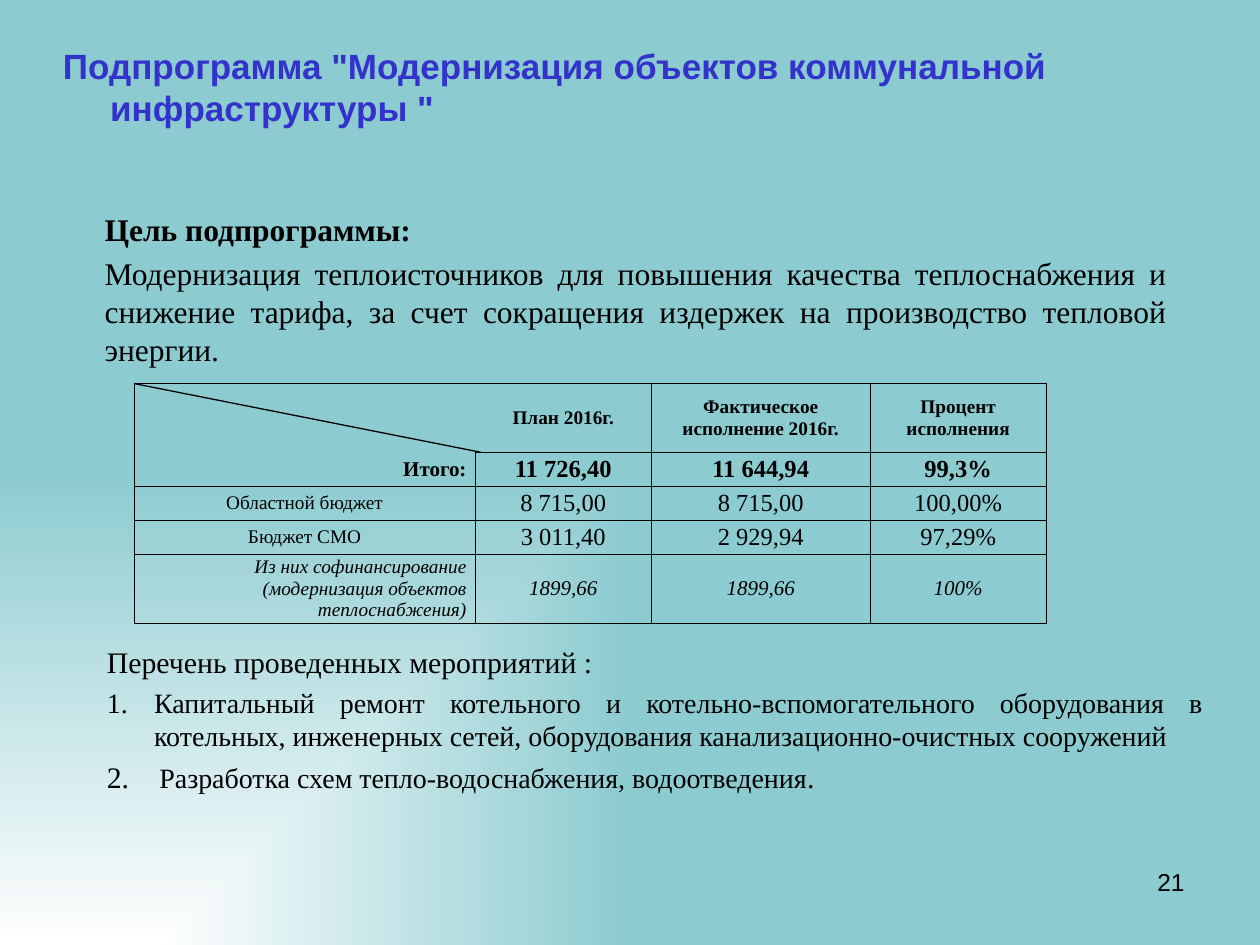
from lxml import etree
from pptx import Presentation
from pptx.dml.color import RGBColor
from pptx.enum.shapes import MSO_CONNECTOR
from pptx.enum.text import MSO_ANCHOR, PP_ALIGN
from pptx.oxml.ns import qn
from pptx.util import Pt

BLACK = RGBColor(0x00, 0x00, 0x00)
WHITE = RGBColor(0xFF, 0xFF, 0xFF)
TEAL = RGBColor(0x8C, 0xCB, 0xD0)
INDIGO = RGBColor(0x33, 0x33, 0xCC)
LEFT, CENTER, RIGHT, JUSTIFY = PP_ALIGN.LEFT, PP_ALIGN.CENTER, PP_ALIGN.RIGHT, PP_ALIGN.JUSTIFY
TOP, MIDDLE = MSO_ANCHOR.TOP, MSO_ANCHOR.MIDDLE
STRAIGHT = MSO_CONNECTOR.STRAIGHT
SERIF, SANS = "Times New Roman", "Arial"


class SlideBuilder:
    def __init__(self, slide):
        self.slide = slide

    def background(self, corner, field):
        fill = self.slide.background.fill
        fill.gradient()
        for stop, color in zip(fill.gradient_stops, (corner, field)):
            stop.color.rgb = color
        gradient = self.slide.element.find(".//" + qn("a:gradFill"))
        gradient.remove(gradient.find(qn("a:lin")))
        focus = etree.SubElement(gradient, qn("a:path"), {"path": "rect"})
        etree.SubElement(focus, qn("a:fillToRect"), {"l": "0", "t": "100000", "r": "100000", "b": "0"})

    def style(self, paragraph, size, align, font=SERIF, color=BLACK, bold=False, italic=False):
        paragraph.alignment = align
        paragraph.font.size = Pt(size)
        paragraph.font.name = font
        paragraph.font.color.rgb = color
        paragraph.font.bold = bold
        paragraph.font.italic = italic

    def hang(self, paragraph, indent):
        properties = paragraph._p.get_or_add_pPr()
        properties.set("marL", str(Pt(indent)))
        properties.set("indent", str(-Pt(indent)))
        return properties

    def number(self, paragraph, value, indent, scale=100):
        properties = self.hang(paragraph, indent)
        etree.SubElement(properties, qn("a:buSzPct"), {"val": str(scale * 1000)})
        etree.SubElement(properties, qn("a:buFont"), {"typeface": SERIF})
        etree.SubElement(properties, qn("a:buAutoNum"), {"type": "arabicPeriod", "startAt": str(value)})

    def text(self, box, lines, insets=(0, 0, 0, 0), anchor=TOP):
        frame = self.slide.shapes.add_textbox(*map(Pt, box)).text_frame
        frame.word_wrap = True
        frame.vertical_anchor = anchor
        frame.margin_left, frame.margin_top, frame.margin_right, frame.margin_bottom = map(Pt, insets)
        for index, line in enumerate(lines):
            paragraph = frame.add_paragraph() if index else frame.paragraphs[0]
            paragraph.text = line
            if index:
                paragraph.space_before = Pt(3.4)
        return frame.paragraphs

    def borders(self, cell, sides):
        properties = cell._tc.get_or_add_tcPr()
        for position, side in enumerate("LRTB"):
            line = etree.Element(qn("a:ln" + side), {"w": str(Pt(0.25))})
            if side in sides:
                solid = etree.SubElement(line, qn("a:solidFill"))
                etree.SubElement(solid, qn("a:srgbClr"), {"val": str(BLACK)})
            else:
                etree.SubElement(line, qn("a:noFill"))
            properties.insert(position, line)

    def table(self, left, top, widths, heights, rows, open_cells):
        table = self.slide.shapes.add_table(
            len(rows), len(widths), Pt(left), Pt(top), Pt(sum(widths)), Pt(sum(heights))
        ).table
        table.first_row = table.horz_banding = False
        for column, width in zip(table.columns, widths):
            column.width = Pt(width)
        for r, (height, (values, label_size, value_size, label_align, emphasis)) in enumerate(zip(heights, rows)):
            table.rows[r].height = Pt(height)
            for c, value in enumerate(values):
                cell = table.cell(r, c)
                cell.fill.background()
                cell.vertical_anchor = MIDDLE
                cell.margin_left = cell.margin_right = Pt(5)
                cell.margin_top = cell.margin_bottom = 0
                paragraph = cell.text_frame.paragraphs[0]
                paragraph.text = value
                size, align = (value_size, CENTER) if c else (label_size, label_align)
                self.style(paragraph, size, align, **emphasis)
                self.borders(cell, open_cells.get((r, c), "LRTB"))

    def line(self, start, end, width):
        connector = self.slide.shapes.add_connector(STRAIGHT, *map(Pt, start + end))
        connector.line.color.rgb = BLACK
        connector.line.width = Pt(width)
        etree.SubElement(connector._element.spPr, qn("a:effectLst"))


def main():
    presentation = Presentation()
    presentation.slide_width, presentation.slide_height = Pt(720), Pt(540)
    builder = SlideBuilder(presentation.slides.add_slide(presentation.slide_layouts[6]))
    builder.background(WHITE, TEAL)

    goal_heading, goal = builder.text(
        (59.8, 116.6, 607, 96.5),
        [
            "Цель подпрограммы:",
            "Модернизация теплоисточников для повышения качества теплоснабжения и снижение тарифа, "
            "за счет сокращения издержек на производство тепловой энергии.",
        ],
        insets=(0, 3.6, 0, 0),
    )
    builder.style(goal_heading, 18, JUSTIFY, bold=True)
    builder.style(goal, 18, JUSTIFY)

    (title,) = builder.text(
        (36, 21.6, 648, 55.4),
        ['Подпрограмма "Модернизация объектов коммунальной инфраструктуры "'],
        anchor=MIDDLE,
    )
    builder.hang(title, 27)
    builder.style(title, 20, LEFT, font=SANS, color=INDIGO, bold=True)

    (page_number,) = builder.text((516.2, 491.8, 167.8, 37.4), ["21"], insets=(7.2, 3.6, 7.2, 3.6))
    builder.style(page_number, 14, RIGHT, font=SANS)

    works_heading, repairs, schemes = builder.text(
        (54, 360.7, 640.8, 130.3),
        [
            "Перечень проведенных мероприятий :",
            "Капитальный ремонт котельного и котельно-вспомогательного оборудования в котельных, "
            "инженерных сетей, оборудования канализационно-очистных сооружений",
            "Разработка схем тепло-водоснабжения, водоотведения",
        ],
        insets=(7.2, 7, 7.2, 3.6),
    )
    builder.number(repairs, 1, 27)
    builder.number(schemes, 2, 30, scale=106)
    builder.style(works_heading, 17, JUSTIFY)
    for work in (repairs, schemes):
        builder.style(work, 16, JUSTIFY)
    full_stop = schemes.add_run()
    full_stop.text = "."
    full_stop.font.size = Pt(17)

    bold, plain, italic = {"bold": True}, {}, {"italic": True}
    budget_rows = [
        (["", "План 2016г.", "Фактическое исполнение 2016г.", "Процент исполнения"], 11, 11, CENTER, bold),
        (["Итого:", "11 726,40", "11 644,94", "99,3%"], 12, 14, RIGHT, bold),
        (["Областной бюджет", "8 715,00", "8 715,00", "100,00%"], 11, 14, CENTER, plain),
        (["Бюджет СМО", "3 011,40", "2 929,94", "97,29%"], 11, 14, CENTER, plain),
        (
            ["Из них софинансирование (модернизация объектов теплоснабжения)", "1899,66", "1899,66", "100%"],
            11, 12, RIGHT, italic,
        ),
    ]
    builder.table(
        76.6, 219.2,
        widths=[195, 100.6, 125.1, 100.6],
        heights=[39.3, 19.4, 19.4, 19.4, 39.3],
        rows=budget_rows,
        open_cells={(0, 0): "LT", (0, 1): "RTB", (1, 0): "LRB"},
    )
    builder.line((275, 258.5), (76.6, 219.2), 0.75)

    presentation.save("out.pptx")


if __name__ == "__main__":
    main()
